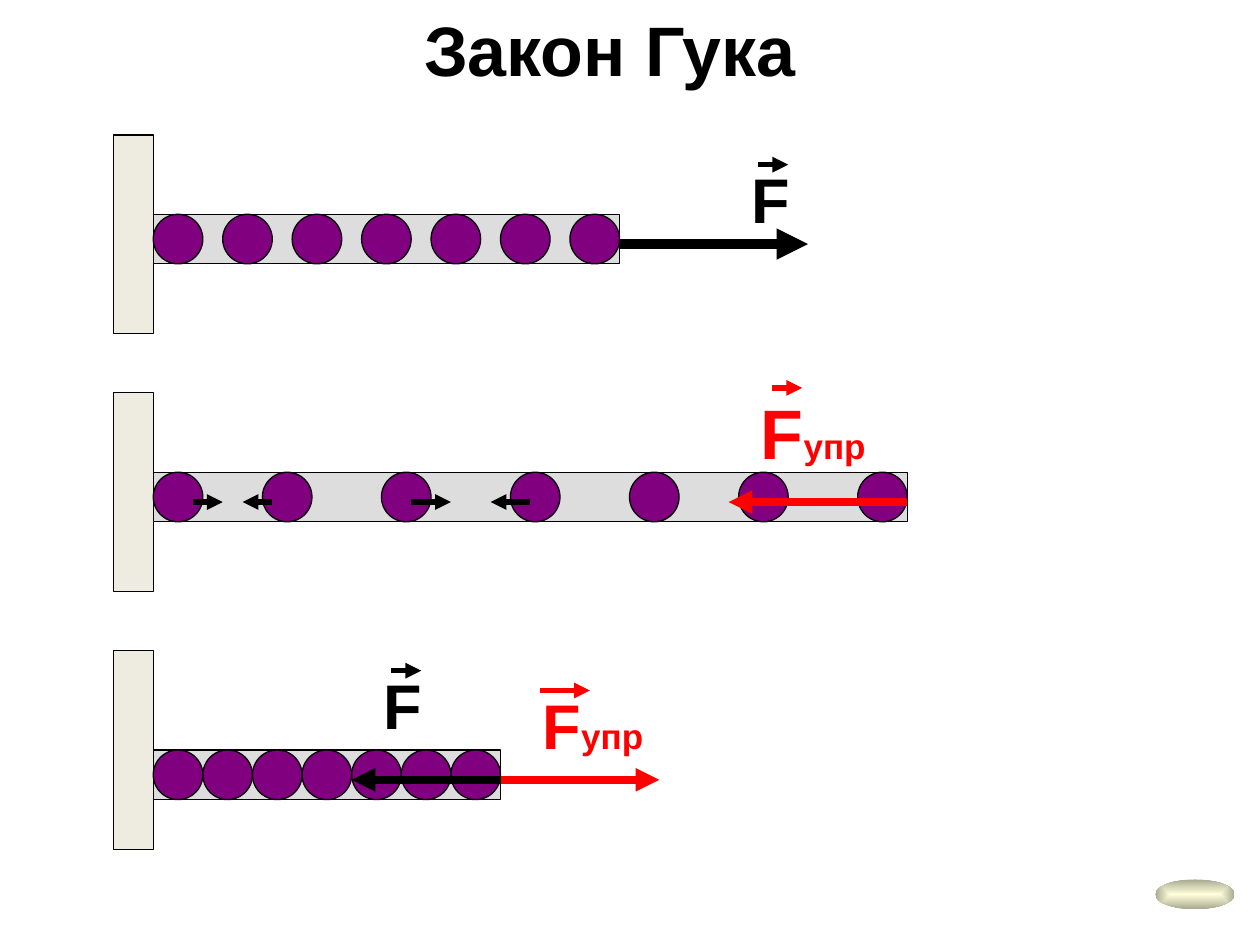
from dataclasses import dataclass

from lxml import etree
from pptx import Presentation
from pptx.dml.color import RGBColor
from pptx.enum.shapes import MSO_CONNECTOR, MSO_SHAPE
from pptx.enum.text import MSO_AUTO_SIZE
from pptx.oxml import parse_xml
from pptx.oxml.ns import qn
from pptx.util import Inches, Mm, Pt

RECTANGLE, OVAL = MSO_SHAPE.RECTANGLE, MSO_SHAPE.OVAL
STRAIGHT = MSO_CONNECTOR.STRAIGHT
FIT_SHAPE, FIT_NONE = MSO_AUTO_SIZE.SHAPE_TO_FIT_TEXT, MSO_AUTO_SIZE.NONE

BLACK, RED = "000000", "FF0000"
WALL_FILL, ROD_FILL, ATOM_FILL = "EEECE1", "DDDDDD", "800080"

# The drawing sits on a grid of 1 mm cells.
WALL_LEFT, WALL_WIDTH, WALL_HEIGHT = 22.9, 8, 40
ROD_LEFT = WALL_LEFT + WALL_WIDTH
FIRST_TOP, ROW_STEP = 27.2, 52
ATOM = 10
FORCE_DROP = 6  # from the top of the rod to its force arrows


@dataclass
class Arrow:
    """Horizontal arrow; columns count from the wall, drop from the rod's top."""
    start: float
    end: float
    color: str = BLACK
    weight: float = 3
    drop: float = FORCE_DROP


@dataclass
class Force:
    """Vector name; its box and the arrow above count from the wall's top."""
    column: float
    row: float
    width: float
    bar_start: float
    bar_end: float
    bar_row: float
    color: str = BLACK
    size: float = 36
    index: str = ""


@dataclass
class Rod:
    drop: float
    atoms: list[int]
    arrows: list[Arrow]
    forces: list[Force]


RODS = [
    Rod(16, [14 * i for i in range(7)],
        [Arrow(94, 132, weight=6)],
        [Force(118.2, 4, 13, 122, 128, 6)]),
    Rod(16, [0, 22, 46, 72, 96, 118, 142],
        [Arrow(8, 14), Arrow(24, 18), Arrow(52, 60), Arrow(76, 68),
         Arrow(152, 116, RED, 4.5)],
        [Force(120, -2, 26.2, 124.8, 130.8, -1, RED, 40, "упр")]),
    Rod(20, [ATOM * i for i in range(7)],
        [Arrow(70, 40, weight=4.5), Arrow(70, 102, RED, 4.5)],
        [Force(76, 6, 25.4, 78, 88, 8, RED, 36, "упр"),
         Force(44, 2, 13, 48, 54, 4)]),
]


def rgb(color: str) -> RGBColor:
    return RGBColor.from_string(color)


def add_solid(page, kind, left: float, top: float, width: float, height: float, fill: str):
    shape = page.shapes.add_shape(kind, Mm(left), Mm(top), Mm(width), Mm(height))
    shape.shadow.inherit = False
    shape.fill.solid()
    shape.fill.fore_color.rgb = rgb(fill)
    shape.line.color.rgb = rgb(BLACK)
    shape.line.width = Pt(0.75)
    return shape


def add_arrow(page, start: float, end: float, row: float, color: str, weight: float) -> None:
    arrow = page.shapes.add_connector(STRAIGHT, Mm(start), Mm(row), Mm(end), Mm(row))
    arrow.line.color.rgb = rgb(color)
    arrow.line.width = Pt(weight)
    head = etree.SubElement(arrow.line._get_or_add_ln(), qn("a:tailEnd"))
    head.set("type", "triangle")
    etree.SubElement(arrow._element.spPr, qn("a:effectLst"))


def add_span(para, text: str, size: float, color: str) -> None:
    span = para.add_run()
    span.text = text
    span.font.name = "Arial"
    span.font.size = Pt(size)
    span.font.bold = True
    span.font.color.rgb = rgb(color)


def add_text(page, text: str, left: float, top: float, width: float, height: float, *,
             size: float, color: str = BLACK, index: str = "", wrap: bool = False) -> None:
    box = page.shapes.add_textbox(Mm(left), Mm(top), Mm(width), Mm(height))
    frame = box.text_frame
    frame.word_wrap = wrap
    frame.auto_size = FIT_NONE if wrap else FIT_SHAPE
    para = frame.paragraphs[0]
    add_span(para, text, size, color)
    if index:
        add_span(para, index, 20, color)


def draw_rod(page, rod: Rod, wall_top: float) -> None:
    rod_top = wall_top + rod.drop
    add_solid(page, RECTANGLE, WALL_LEFT, wall_top, WALL_WIDTH, WALL_HEIGHT, WALL_FILL)
    add_solid(page, RECTANGLE, ROD_LEFT, rod_top, rod.atoms[-1] + ATOM, ATOM, ROD_FILL)
    for column in rod.atoms:
        add_solid(page, OVAL, ROD_LEFT + column, rod_top, ATOM, ATOM, ATOM_FILL)
    for arrow in rod.arrows:
        add_arrow(page, ROD_LEFT + arrow.start, ROD_LEFT + arrow.end,
                  rod_top + arrow.drop, arrow.color, arrow.weight)
    for force in rod.forces:
        add_text(page, "F", ROD_LEFT + force.column, wall_top + force.row, force.width,
                 force.size / 2, size=force.size, color=force.color, index=force.index)
        add_arrow(page, ROD_LEFT + force.bar_start, ROD_LEFT + force.bar_end,
                  wall_top + force.bar_row, force.color, 3)


def draw_button(page) -> None:
    button = add_solid(page, OVAL, 232.9, 177.3, 16, 6, "FFFFDB")
    button.line.fill.background()
    properties = button._element.spPr
    gradient = parse_xml(
        '<a:gradFill xmlns:a="http://schemas.openxmlformats.org/drawingml/2006/main">'
        '<a:gsLst><a:gs pos="0"><a:srgbClr val="FFFFDB"/></a:gs>'
        '<a:gs pos="100000"><a:srgbClr val="A9A991"/></a:gs></a:gsLst>'
        '<a:path path="shape"><a:fillToRect l="50000" t="50000" r="50000" b="50000"/>'
        '</a:path></a:gradFill>')
    properties.replace(properties.find(qn("a:solidFill")), gradient)


def main() -> None:
    deck = Presentation()
    deck.slide_width, deck.slide_height = Inches(10), Inches(7.5)
    page = deck.slides.add_slide(deck.slide_layouts[6])
    for number, rod in enumerate(RODS):
        draw_rod(page, rod, FIRST_TOP + ROW_STEP * number)
    draw_button(page)
    add_text(page, "Закон Гука", 83, 0, 86, 19.6, size=40, wrap=True)
    deck.save("out.pptx")


if __name__ == "__main__":
    main()
